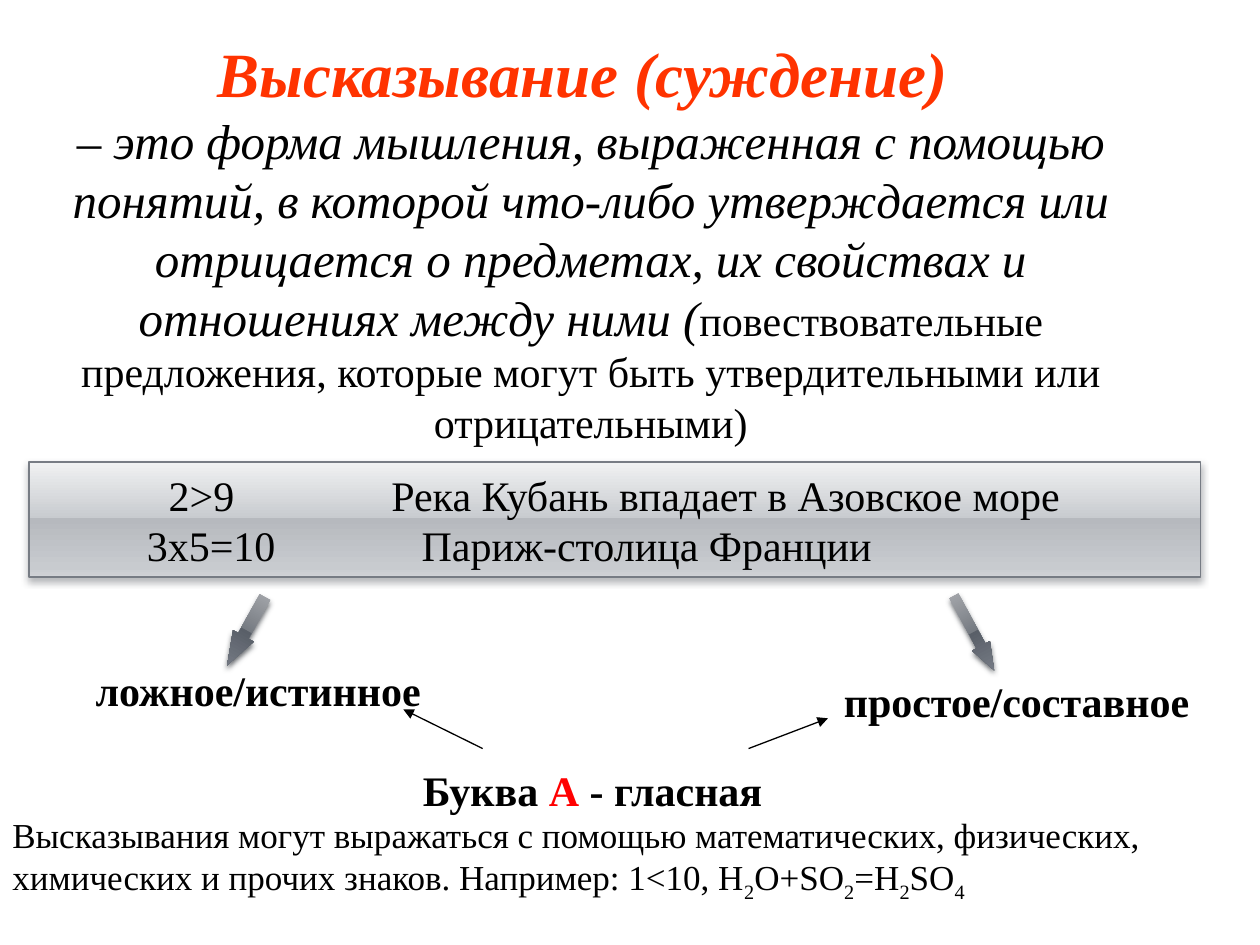
from dataclasses import dataclass

from lxml import etree
from pptx import Presentation
from pptx import util as u
from pptx.dml.color import RGBColor
from pptx.enum import shapes, text
from pptx.oxml import parse_xml
from pptx.oxml.ns import nsdecls, qn


@dataclass(frozen=True)
class Theme:
    font: str = "Times New Roman"
    ink: str = "000000"
    heading: str = "FF3300"
    accent: str = "FF0000"
    band_line: str = "777C84"
    band_stops: tuple = ((0, "F0F1F2"), (49, "C8CBCF"), (49, "B6B9BE"), (92, "C8CBCF"), (100, "D1D3D7"))
    arrow_stops: tuple = ((0, "A9ABAF"), (49, "767B82"), (49, "595F68"), (92, "757A84"), (100, "8A8E96"))
    band_shadow: tuple = ("454950", 38, 4)
    arrow_shadow: tuple = ("494D52", 83, 3.1)
    title: int = 36
    definition: int = 28
    body: int = 24
    note: int = 20


theme = Theme()


def write(paragraph, content, size, color=theme.ink, bold=False, italic=False):
    run = paragraph.add_run()
    run.text = content
    run.font.name = theme.font
    run.font.size = u.Pt(size)
    run.font.bold = bold
    run.font.italic = italic
    run.font.color.rgb = RGBColor.from_string(color)
    return run


def shade(shape, stops, shadow):
    shape.shadow.inherit = False
    marks = "".join(
        f'<a:gs pos="{pos * 1000}"><a:srgbClr val="{color}"/></a:gs>' for pos, color in stops
    )
    gradient = parse_xml(
        f'<a:gradFill {nsdecls("a")} rotWithShape="1"><a:gsLst>{marks}</a:gsLst>'
        '<a:lin ang="5400000" scaled="0"/></a:gradFill>'
    )
    properties = shape._element.spPr
    properties.find(qn("a:prstGeom")).addnext(gradient)
    color, alpha, blur = shadow
    properties.find(qn("a:effectLst")).append(parse_xml(
        f'<a:outerShdw {nsdecls("a")} blurRad="{u.Pt(blur)}" dist="{u.Pt(2)}" dir="5400000" '
        f'rotWithShape="0"><a:srgbClr val="{color}"><a:alpha val="{alpha * 1000}"/>'
        '</a:srgbClr></a:outerShdw>'
    ))


prs = Presentation()
prs.slide_width = u.Cm(25.4)
prs.slide_height = u.Cm(19.05)
slide = prs.slides.add_slide(prs.slide_layouts[6])

paragraphs = {}
for part, left, top, width, height in (
    ("definition", 0.58, 0.58, 22.66, 10.77),
    ("structure", 14.68, 13.49, 11.63, 1.27),
    ("truth", 0, 13.28, 10.41, 1.27),
    ("example", 5.94, 15.29, 12.01, 1.27),
    ("notation", 0, 16.28, 25.4, 1.96),
):
    frame = slide.shapes.add_textbox(u.Cm(left), u.Cm(top), u.Cm(width), u.Cm(height)).text_frame
    frame.word_wrap = True
    paragraphs[part] = frame.paragraphs[0]
    paragraphs[part].alignment = text.PP_ALIGN.CENTER
paragraphs["notation"].alignment = text.PP_ALIGN.LEFT

definition = paragraphs["definition"]
write(definition, "Высказывание (суждение) ", theme.title, theme.heading, bold=True, italic=True)
definition.add_line_break()
write(
    definition,
    "– это форма мышления, выраженная с помощью понятий, в которой что-либо утверждается "
    "или отрицается о предметах, их свойствах и отношениях между ними (",
    theme.definition, italic=True,
)
write(
    definition,
    "повествовательные предложения, которые могут быть утвердительными или отрицательными)",
    theme.body,
)

write(paragraphs["structure"], "простое/составное", theme.body, bold=True)
write(paragraphs["truth"], "ложное/истинное", theme.body, bold=True)
for content, color in (("Буква ", theme.ink), ("А", theme.accent), (" - гласная", theme.ink)):
    write(paragraphs["example"], content, theme.body, color, bold=True)

notation = paragraphs["notation"]
write(
    notation,
    "Высказывания могут выражаться с помощью математических, физических, химических "
    "и прочих знаков. Например: 1<10, ",
    theme.note,
)
for formula, index in (("H", "2"), ("O+SO", "2"), ("=H", "2"), ("SO", "4")):
    write(notation, formula, theme.note)
    subscript = write(notation, index, theme.note)
    subscript._r.get_or_add_rPr().set("baseline", "-25000")

for left, top, width, height, angle, head in (
    (19.43, 11.91, 0.41, 1.7, 331.6, 1.35),
    (4.72, 11.94, 0.48, 1.57, 29, 1.41),
):
    pointer = slide.shapes.add_shape(
        shapes.MSO_SHAPE.DOWN_ARROW, u.Cm(left), u.Cm(top), u.Cm(width), u.Cm(height)
    )
    pointer.rotation = angle
    pointer.adjustments[1] = head
    pointer.line.fill.background()
    shade(pointer, theme.arrow_stops, theme.arrow_shadow)

for start, end_x, end_y in ((15.09, 16.69, 14.48), (9.73, 8.13, 14.3)):
    link = slide.shapes.add_connector(
        shapes.MSO_CONNECTOR.STRAIGHT, u.Cm(start), u.Cm(15.09), u.Cm(end_x), u.Cm(end_y)
    )
    link.line.color.rgb = RGBColor.from_string(theme.ink)
    link.line.width = u.Pt(0.75)
    etree.SubElement(link.line._get_or_add_ln(), qn("a:tailEnd"), type="triangle")
    etree.SubElement(link._element.spPr, qn("a:effectLst"))

band = slide.shapes.add_shape(
    shapes.MSO_SHAPE.RECTANGLE, u.Cm(0.58), u.Cm(9.32), u.Cm(23.62), u.Cm(2.31)
)
band.line.color.rgb = RGBColor.from_string(theme.band_line)
band.line.width = u.Pt(0.9)
shade(band, theme.band_stops, theme.band_shadow)
band.text_frame.word_wrap = True
band.text_frame.vertical_anchor = text.MSO_ANCHOR.MIDDLE
statements = (
    ("2>9", 2.57, "Река Кубань впадает в Азовское море", 7.06),
    ("3x5=10", 2.13, "Париж-столица Франции", 7.67),
)
for row, (formula, formula_tab, sentence, sentence_tab) in enumerate(statements):
    line = band.text_frame.add_paragraph() if row else band.text_frame.paragraphs[0]
    line.alignment = text.PP_ALIGN.LEFT
    tabs = etree.SubElement(line._p.get_or_add_pPr(), qn("a:tabLst"))
    for stop in (formula_tab, sentence_tab):
        etree.SubElement(tabs, qn("a:tab"), pos=str(u.Cm(stop)), algn="l")
    write(line, f"\t{formula}\t{sentence}", theme.body)

prs.save("out.pptx")
